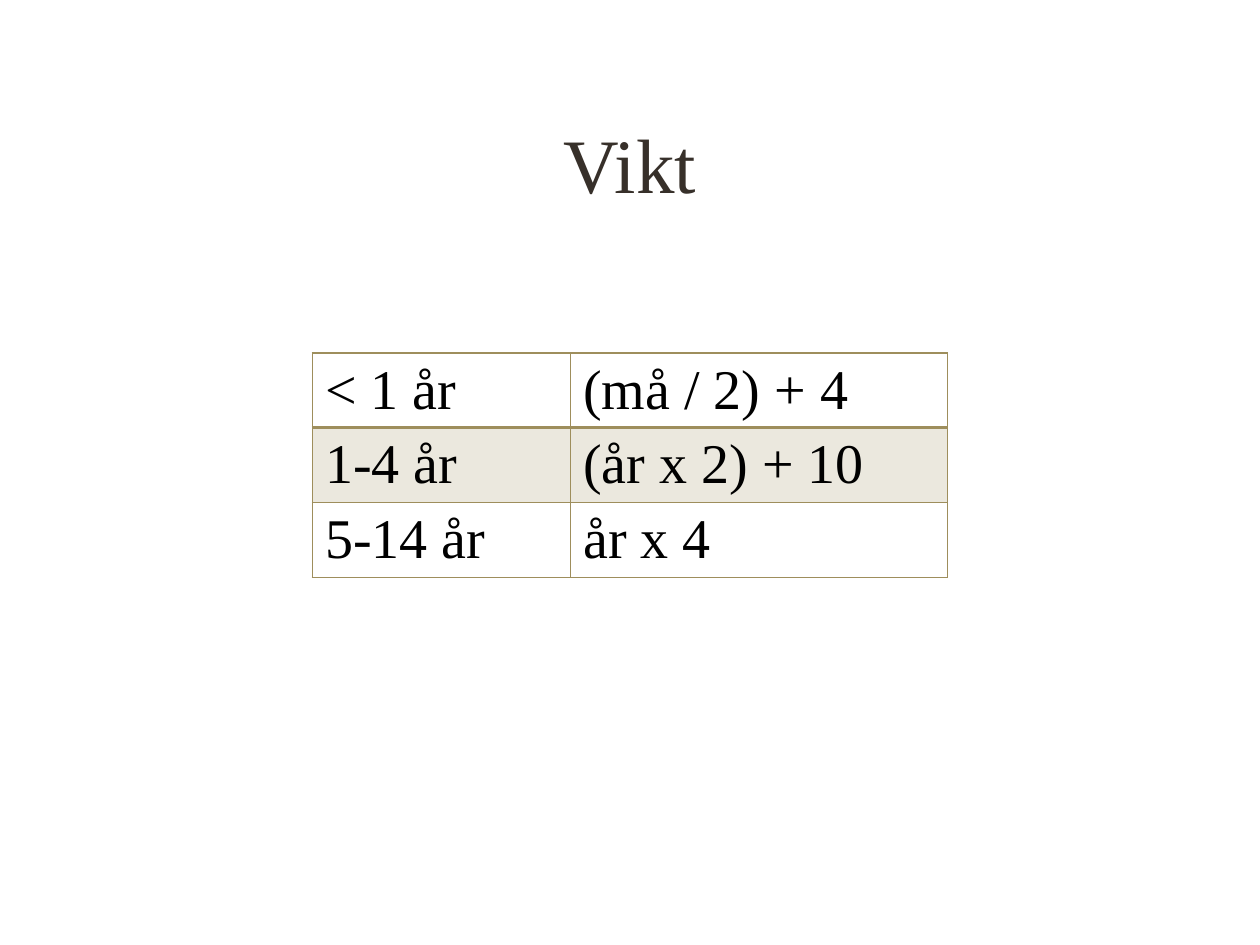
from lxml import etree
from pptx import Presentation
from pptx.dml.color import RGBColor
from pptx.enum import text
from pptx.oxml.ns import qn
from pptx.util import Inches, Pt

OCHRE = "9E8E5C"


def write(frame, words, size, color, align=text.PP_ALIGN.LEFT):
    frame.text = words
    paragraph = frame.paragraphs[0]
    paragraph.alignment = align
    font = paragraph.runs[0].font
    font.name = "Times New Roman"
    font.size = Pt(size)
    font.color.rgb = RGBColor.from_string(color)


def add_border(cell, side, width):
    """Draw one cell edge; side is L, R, T or B, in that order."""
    line = etree.SubElement(cell._tc.get_or_add_tcPr(), qn(f"a:ln{side}"), w=str(Pt(width)))
    fill = etree.SubElement(line, qn("a:solidFill"))
    etree.SubElement(fill, qn("a:srgbClr"), val=OCHRE)


prs = Presentation()
prs.slide_width, prs.slide_height = Inches(10), Inches(7.5)
slide = prs.slides.add_slide(prs.slide_layouts[5])

title = slide.shapes.title
title.left, title.top = Inches(0.75), Inches(0.67)
title.width, title.height = Inches(8.5), Inches(1.25)
title.text_frame.vertical_anchor = text.MSO_ANCHOR.MIDDLE
write(title.text_frame, "Vikt", 44, "37302A", text.PP_ALIGN.CENTER)

weight_rules = [
    ("< 1 år", "(må / 2) + 4"),
    ("1-4 år", "(år x 2) + 10"),
    ("5-14 år", "år x 4"),
]
column_widths = [2.05, 2.99]
row_height = 0.59

weights = slide.shapes.add_table(
    len(weight_rules), len(column_widths), Inches(2.48), Inches(2.8),
    Inches(sum(column_widths)), Inches(row_height * len(weight_rules))).table
weights.horz_banding = False
for column, width in zip(weights.columns, column_widths):
    column.width = Inches(width)

for r, rule in enumerate(weight_rules):
    weights.rows[r].height = Inches(row_height)
    for c, words in enumerate(rule):
        cell = weights.cell(r, c)
        write(cell.text_frame, words, 32, "000000")
        for side in "LRTB":
            under_header = (r, side) in [(0, "B"), (1, "T")]
            add_border(cell, side, 2 if under_header else 1)
        if r == 1:
            cell.fill.solid()
            cell.fill.fore_color.rgb = RGBColor.from_string(OCHRE)
            tint = cell._tc.tcPr.find(qn("a:solidFill")).find(qn("a:srgbClr"))
            etree.SubElement(tint, qn("a:alpha"), val="20000")
        else:
            cell.fill.background()

prs.save("out.pptx")
